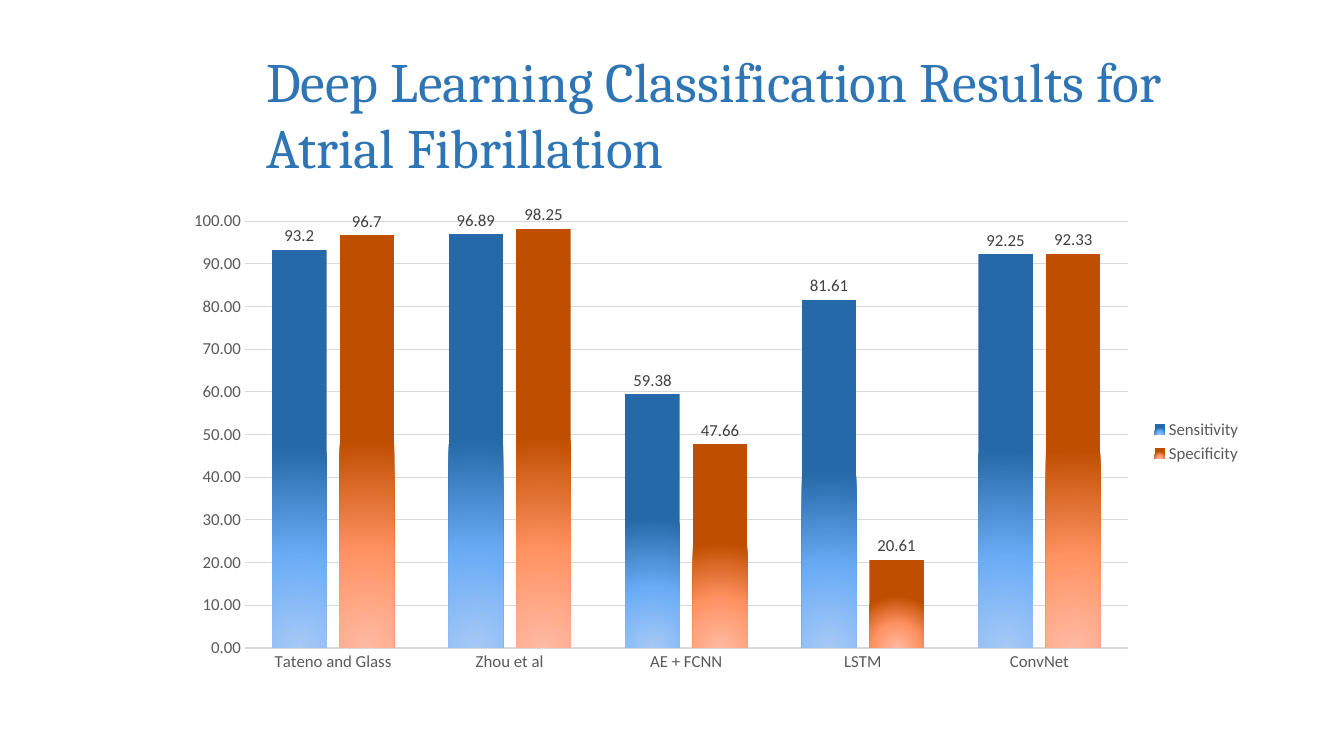
from lxml import etree
from pptx import Presentation
from pptx import util as u
from pptx.chart.data import CategoryChartData
from pptx.dml.color import RGBColor
from pptx.enum import chart as charts, text
from pptx.oxml import parse_xml
from pptx.oxml.ns import nsdecls, qn

METHODS = ["Tateno and Glass", "Zhou et al", "AE + FCNN", "LSTM", "ConvNet"]
MEASURES = {
    "Sensitivity": ([93.2, 96.89, 59.38, 81.61, 92.25], ["A6C9F6", "6AACF6", "2569A8"]),
    "Specificity": ([96.7, 98.25, 47.66, 20.61, 92.33], ["FFBAA3", "FF9363", "C04E00"]),
}
GRADIENT_STOPS = [0, 46, 100]


def color(hex_value):
    return RGBColor.from_string(hex_value)


def style_font(font, size, hex_value, name="Calibri"):
    for attribute, value in {"size": u.Pt(size), "name": name, "bold": False}.items():
        setattr(font, attribute, value)
    font.color.rgb = color(hex_value)


def fill_radial(series, hex_values):
    """Fill the columns with a circular gradient centred below their base."""
    series.format.fill.solid()
    properties = series.format.fill._xPr
    stops = "".join(
        f'<a:gs pos="{stop * 1000}"><a:srgbClr val="{value}"/></a:gs>'
        for stop, value in zip(GRADIENT_STOPS, hex_values))
    gradient = parse_xml(
        f'<a:gradFill {nsdecls("a")} rotWithShape="1"><a:gsLst>{stops}</a:gsLst>'
        '<a:path path="circle"><a:fillToRect l="50000" t="155000" r="50000" b="-55000"/>'
        '</a:path></a:gradFill>')
    properties.replace(properties.find(qn("a:solidFill")), gradient)
    etree.SubElement(properties, qn("a:effectLst"))


def add_title(slide, left, top, width, height):
    box = slide.shapes.add_textbox(left, top, width, height)
    frame = box.text_frame
    frame.word_wrap = True
    frame.vertical_anchor = text.MSO_ANCHOR.MIDDLE
    heading = frame.paragraphs[0]
    heading.text = "Deep Learning Classification Results for Atrial Fibrillation"
    style_font(heading.runs[0].font, 39.6, "2E75B6", "Cambria")


def style_axes(chart):
    methods, percent = chart.category_axis, chart.value_axis
    for axis in (methods, percent):
        axis.major_tick_mark = axis.minor_tick_mark = charts.XL_TICK_MARK.NONE
        style_font(axis.tick_labels.font, 12, "595959")
    methods.format.line.color.rgb = color("D9D9D9")
    methods.format.line.width = u.Pt(1)

    percent.minimum_scale, percent.maximum_scale, percent.major_unit = 0, 100, 10
    percent.format.line.fill.background()
    percent.tick_labels.number_format = "0.00"
    percent.tick_labels.number_format_is_linked = False
    grid = percent.major_gridlines.format.line
    grid.color.rgb = color("D9D9D9")
    grid.width = u.Pt(0.75)


def add_results_chart(slide, left, top, width, height):
    results = CategoryChartData()
    results.categories = METHODS
    for measure, (values, _) in MEASURES.items():
        results.add_series(measure, values)
    chart = slide.shapes.add_chart(
        charts.XL_CHART_TYPE.COLUMN_CLUSTERED, left, top, width, height, results).chart
    chart.has_title = False
    style_font(chart.font, 10, "000000")
    style_axes(chart)

    chart.has_legend = True
    chart.legend.position = charts.XL_LEGEND_POSITION.RIGHT
    chart.legend.include_in_layout = False
    style_font(chart.legend.font, 12, "595959")

    plot = chart.plots[0]
    plot.vary_by_categories = False
    plot.gap_width, plot.overlap = 100, -24
    for series in plot.series:
        fill_radial(series, MEASURES[series.name][1])
        labels = series.data_labels
        labels.show_value = True
        labels.position = charts.XL_LABEL_POSITION.OUTSIDE_END
        style_font(labels.font, 12, "404040")


def main():
    deck = Presentation()
    deck.slide_width, deck.slide_height = u.Inches(13.33), u.Inches(7.5)
    slide = deck.slides.add_slide(deck.slide_layouts[6])
    add_title(slide, u.Inches(2.54), u.Inches(0.4), u.Inches(9.88), u.Inches(1.45))
    add_results_chart(slide, u.Inches(1.71), u.Inches(2), u.Inches(10.71), u.Inches(4.76))
    deck.save("out.pptx")


if __name__ == "__main__":
    main()
